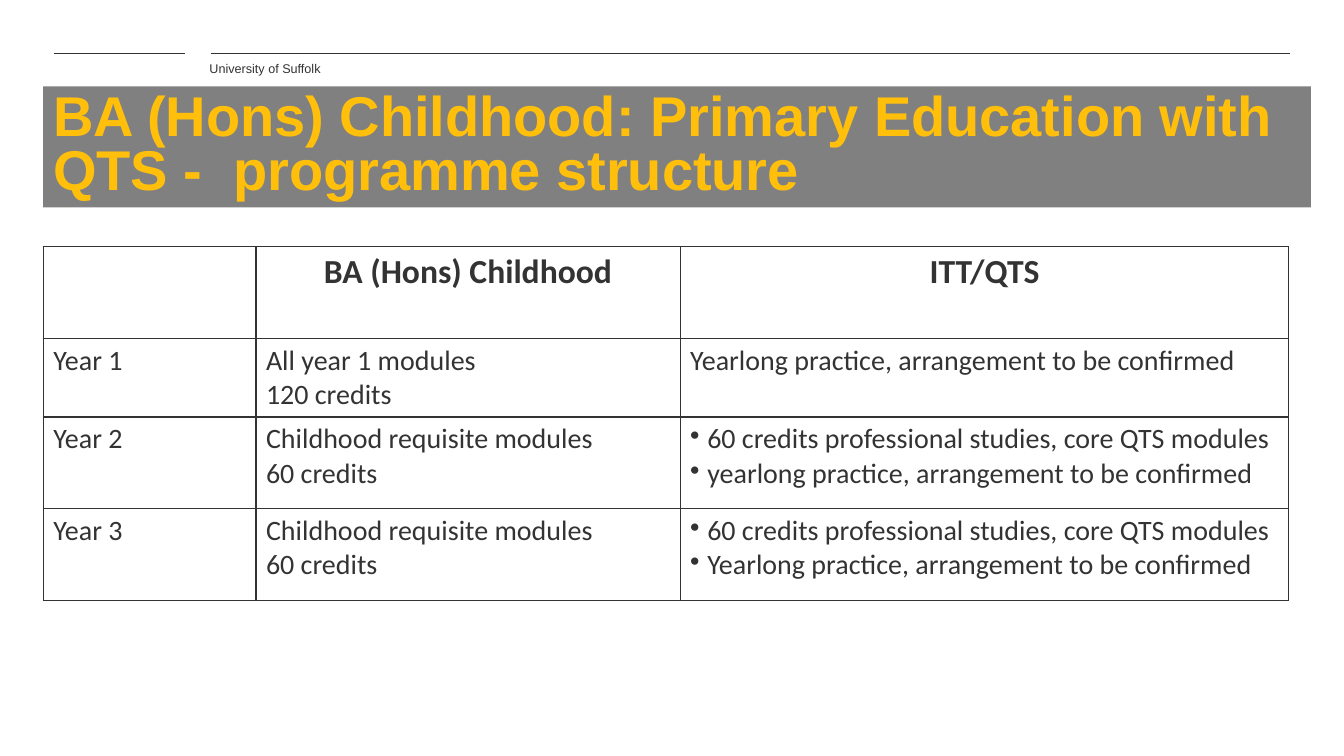
import pptx
import pptx.util
import pptx.dml.color
import pptx.enum.shapes
import pptx.enum.text
from lxml import etree
from pptx.oxml.ns import qn

Cm, Pt = pptx.util.Cm, pptx.util.Pt
RGB = pptx.dml.color.RGBColor
ALIGN = pptx.enum.text.PP_ALIGN

INK = RGB(0x33, 0x33, 0x33)
GREY = RGB(0x80, 0x80, 0x80)
GOLD = RGB(0xFF, 0xBF, 0x0B)

SCHOOL = "University of Suffolk"
TITLE = "BA (Hons) Childhood: Primary Education with QTS -  programme structure"
HEAD = [[], ["BA (Hons) Childhood"], ["ITT/QTS"]]
YEARS = [
    [["Year 1"], ["All year 1 modules", "120 credits"],
     ["Yearlong practice, arrangement to be confirmed"]],
    [["Year 2"], ["Childhood requisite modules", "60 credits"],
     ["60 credits professional studies, core QTS modules",
      "yearlong practice, arrangement to be confirmed"]],
    [["Year 3"], ["Childhood requisite modules", "60 credits"],
     ["60 credits professional studies, core QTS modules",
      "Yearlong practice, arrangement to be confirmed"]],
]
RULES = [(1.35, 4.65), (5.31, 32.51)]
RULE_Y = 1.35
WIDTHS = [5.36, 10.69, 15.34]
HEIGHTS = [2.31, 1.98, 2.31, 2.31]
LEFT, TOP = 1.09, 6.22


def style(para, size, color, face, bold=False):
    font = para.font
    font.size, font.name, font.bold = Pt(size), face, bold
    font.color.rgb = color


def bullet(para):
    props = para._p.get_or_add_pPr()
    indent = Cm(0.43)
    props.set("marL", str(indent))
    props.set("indent", str(-indent))
    etree.SubElement(props, qn("a:buChar")).set("char", "•")


def border(cell):
    props = cell._tc.get_or_add_tcPr()
    for side in ("lnL", "lnR", "lnT", "lnB"):
        line = etree.SubElement(props, qn("a:" + side), w=str(Pt(1)))
        fill = etree.SubElement(line, qn("a:solidFill"))
        etree.SubElement(fill, qn("a:srgbClr"), val=str(INK))


def add_rules(slide):
    for start, end in RULES:
        rule = slide.shapes.add_connector(
            pptx.enum.shapes.MSO_CONNECTOR.STRAIGHT,
            Cm(start), Cm(RULE_Y), Cm(end), Cm(RULE_Y))
        rule.line.color.rgb = INK
        rule.line.width = Pt(0.5)
        etree.SubElement(rule._element.spPr, qn("a:effectLst"))


def add_school(slide):
    box = slide.shapes.add_textbox(Cm(5.03), Cm(1.42), Cm(11.43), Cm(1.02))
    box.text_frame.word_wrap = True
    para = box.text_frame.paragraphs[0]
    para.text = SCHOOL
    style(para, 9, INK, "Arial")


def add_title(slide):
    band = slide.shapes.add_shape(
        pptx.enum.shapes.MSO_SHAPE.RECTANGLE,
        Cm(LEFT), Cm(2.18), Cm(31.95), Cm(3.05))
    band.shadow.inherit = False
    band.fill.solid()
    band.fill.fore_color.rgb = GREY
    band.line.fill.background()
    frame = band.text_frame
    frame.word_wrap = True
    frame.vertical_anchor = pptx.enum.text.MSO_ANCHOR.MIDDLE
    para = frame.paragraphs[0]
    para.text = TITLE
    para.alignment = ALIGN.LEFT
    para.line_spacing = 0.8
    style(para, 40, GOLD, "Arial", True)


def fill_cell(cell, lines, head, listed):
    border(cell)
    cell.fill.background()
    frame = cell.text_frame
    frame.text = "\n".join(lines)
    for para in frame.paragraphs:
        if listed:
            bullet(para)
        para.alignment = ALIGN.CENTER if head else ALIGN.LEFT
        style(para, 24 if head else 20, INK, "Calibri", head)


def add_grid(slide):
    rows = [HEAD] + YEARS
    grid = slide.shapes.add_table(
        len(rows), len(WIDTHS), Cm(LEFT), Cm(TOP),
        Cm(sum(WIDTHS)), Cm(sum(HEIGHTS))).table
    grid.first_row = grid.horz_banding = False
    for col, width in zip(grid.columns, WIDTHS):
        col.width = Cm(width)
    for row, height in zip(grid.rows, HEIGHTS):
        row.height = Cm(height)
    for r, row in enumerate(rows):
        for c, lines in enumerate(row):
            listed = c == 2 and len(lines) > 1
            fill_cell(grid.cell(r, c), lines, r == 0, listed)


def main():
    deck = pptx.Presentation()
    deck.slide_width, deck.slide_height = Cm(33.87), Cm(19.05)
    slide = deck.slides.add_slide(deck.slide_layouts[6])
    add_rules(slide)
    add_school(slide)
    add_title(slide)
    add_grid(slide)
    deck.save("out.pptx")


if __name__ == "__main__":
    main()
